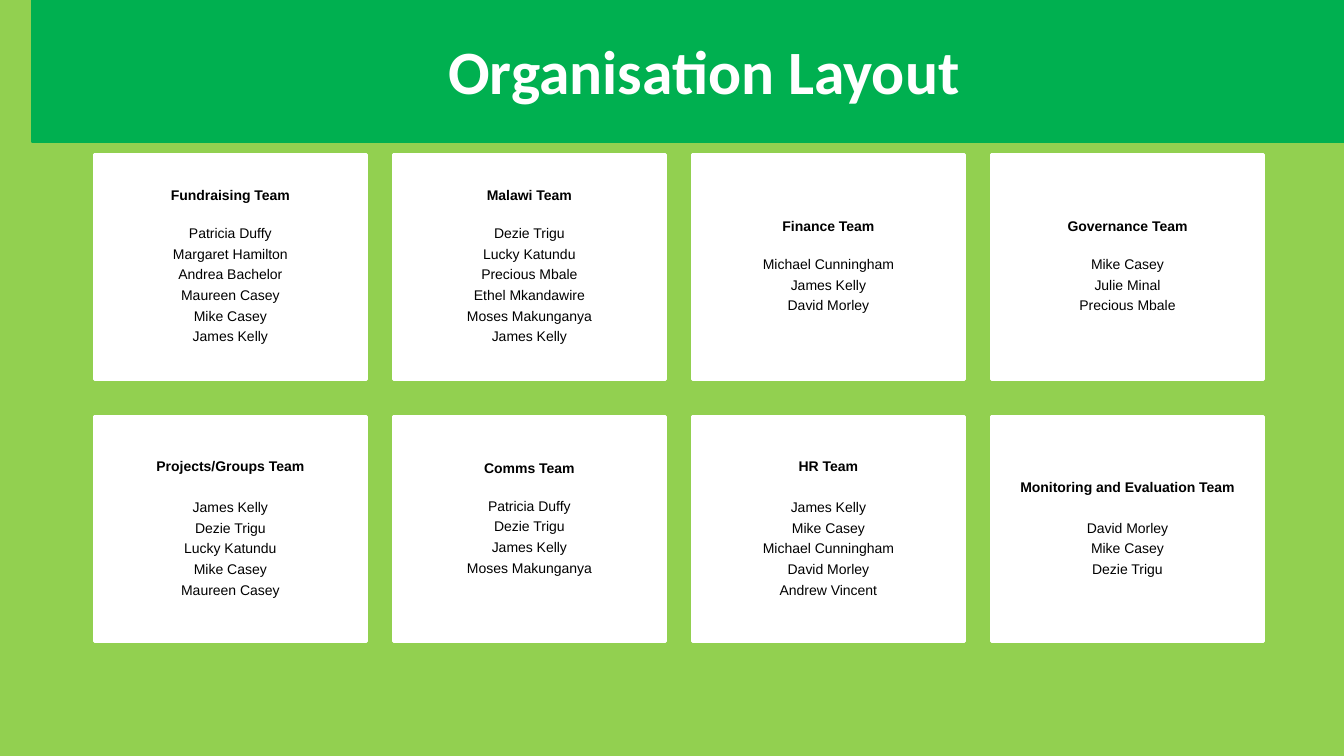
from pptx import Presentation
from pptx import util as u
from pptx.dml import color
from pptx.enum import shapes, text

TITLE = "Organisation Layout"
TIGHT, WIDE = 16.1, 18.2
TEAMS = [
    ("Fundraising Team", TIGHT, 0, ["Patricia Duffy", "Margaret Hamilton", "Andrea Bachelor",
                                    "Maureen Casey", "Mike Casey", "James Kelly"]),
    ("Malawi Team", TIGHT, 0, ["Dezie Trigu", "Lucky Katundu", "Precious Mbale",
                               "Ethel Mkandawire", "Moses Makunganya", "James Kelly"]),
    ("Finance Team", TIGHT, 0, ["Michael Cunningham", "James Kelly", "David Morley"]),
    ("Governance Team", TIGHT, 0, ["Mike Casey", "Julie Minal", "Precious Mbale"]),
    ("Projects/Groups Team", WIDE, 0, ["James Kelly", "Dezie Trigu", "Lucky Katundu",
                                       "Mike Casey", "Maureen Casey"]),
    ("Comms Team", TIGHT, 14.3, ["Patricia Duffy", "Dezie Trigu", "James Kelly",
                                 "Moses Makunganya"]),
    ("HR Team", WIDE, 0, ["James Kelly", "Mike Casey", "Michael Cunningham",
                          "David Morley", "Andrew Vincent"]),
    ("Monitoring and Evaluation Team", WIDE, 0, ["David Morley", "Mike Casey", "Dezie Trigu"]),
]
COLS = 4
LEFT, TOP = 67.4, 110.2
WIDTH, HEIGHT = 194.2, 160.8
STEP, DROP = 213.6, 187.2
INSET = 2.9
HEAD = {"name": "Calibri", "size": u.Pt(44), "bold": True}
TEAM = {"name": "Arial", "size": u.Pt(10), "bold": True}
NAME = {**TEAM, "bold": False}


def rgb(code):
    return color.RGBColor.from_string(code)


def put(obj, vals):
    for key, val in vals.items():
        setattr(obj, key, val)


def box(x, y, w, h, tint, line, pads):
    item = slide.shapes.add_shape(shapes.MSO_SHAPE.RECTANGLE, *map(u.Pt, (x, y, w, h)))
    item.shadow.inherit = False
    item.fill.solid()
    item.fill.fore_color.rgb = rgb(tint)
    item.line.color.rgb = rgb(tint)
    item.line.width = u.Pt(line)
    frame = item.text_frame
    sides = ("margin_left", "margin_top", "margin_right", "margin_bottom")
    put(frame, {"word_wrap": True, "vertical_anchor": text.MSO_ANCHOR.MIDDLE,
                **dict(zip(sides, map(u.Pt, pads)))})
    return frame


def write(para, words, font, ink, form):
    put(para, {"alignment": text.PP_ALIGN.CENTER, **form})
    run = para.add_run()
    run.text = words
    put(run.font, font)
    run.font.color.rgb = rgb(ink)


deck = Presentation()
put(deck, {"slide_width": u.Pt(960), "slide_height": u.Pt(540)})
slide = deck.slides.add_slide(deck.slide_layouts[6])
slide.background.fill.solid()
slide.background.fill.fore_color.rgb = rgb("92D050")

banner = box(23, -1.4, 960, 103, "00B050", 1, (7.2, 3.6, 7.2, 3.6))
write(banner.paragraphs[0], TITLE, HEAD, "FFFFFF", {})

for i, (team, gap, rise, names) in enumerate(TEAMS):
    row, col = divmod(i, COLS)
    card = box(LEFT + col * STEP, TOP + row * DROP, WIDTH, HEIGHT, "FFFFFF", 2,
               (INSET, INSET, INSET, INSET + rise))
    write(card.paragraphs[0], team, TEAM, "000000",
          {"line_spacing": 0.9, "space_after": u.Pt(gap)})
    for name in names:
        write(card.add_paragraph(), name, NAME, "000000",
              {"line_spacing": 0.9, "space_after": u.Pt(3.9)})

deck.save("out.pptx")
